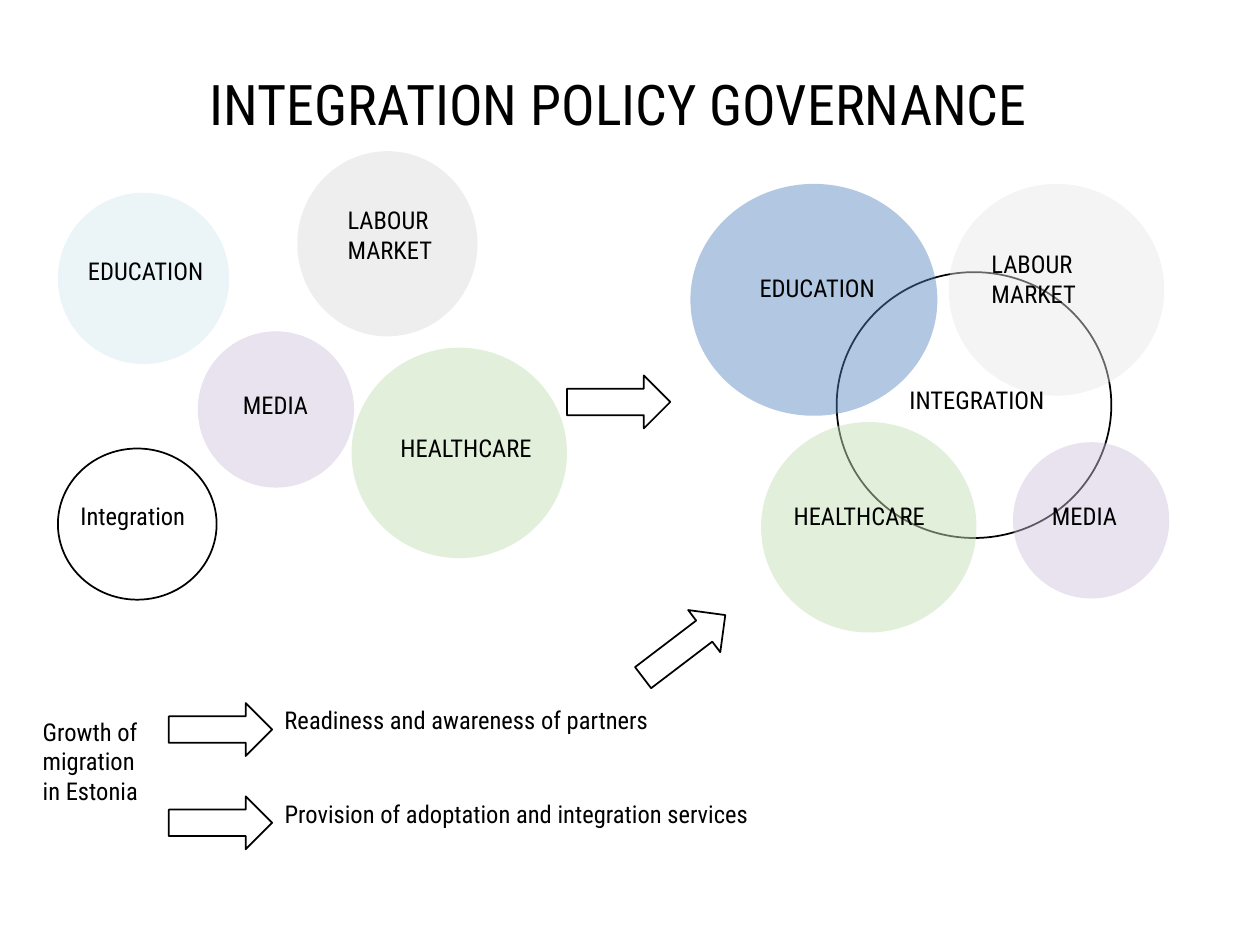
from lxml import etree
from pptx import Presentation
from pptx.dml.color import RGBColor
from pptx.enum.shapes import MSO_SHAPE
from pptx.enum.text import MSO_ANCHOR, MSO_AUTO_SIZE, PP_ALIGN
from pptx.oxml.ns import qn
from pptx.util import Inches, Pt

OVAL = MSO_SHAPE.OVAL
RIGHT_ARROW = MSO_SHAPE.RIGHT_ARROW
MIDDLE = MSO_ANCHOR.MIDDLE
CENTER = PP_ALIGN.CENTER
NO_AUTOFIT = MSO_AUTO_SIZE.NONE
FIT_SHAPE = MSO_AUTO_SIZE.SHAPE_TO_FIT_TEXT

FONT = "Roboto Condensed"
BLACK, WHITE = "000000", "FFFFFF"
PALE_BLUE, BLUE = "DBEEF4", "4F81BD"
GREY, PALE_GREY = "D9D9D9", "E7E6E6"
GREEN, PURPLE = "C5E0B4", "CCC1DA"
ARROW_SIZE = (0.82, 0.42)
LINE_HEIGHT, TWO_LINES, THREE_LINES = 0.34, 0.57, 0.81


def set_color(color_format, hex_color):
    color_format.rgb = RGBColor.from_string(hex_color)


def format_text(text_frame, size):
    for paragraph in text_frame.paragraphs:
        for run in paragraph.runs:
            run.font.name = FONT
            run.font.size = Pt(size)
            set_color(run.font.color, BLACK)


def add_filled(slide, kind, origin, box, fill, opacity=None):
    """Add a shape at an offset from origin: outlined if opaque, else without line."""
    left, top, width, height = box
    shape = slide.shapes.add_shape(
        kind, Inches(origin[0] + left), Inches(origin[1] + top),
        Inches(width), Inches(height))
    shape.shadow.inherit = False
    shape.fill.solid()
    set_color(shape.fill.fore_color, fill)
    if opacity is None:
        set_color(shape.line.color, BLACK)
        shape.line.width = Pt(1)
    else:
        shape.line.fill.background()
        color = shape.fill._xPr.find(f"{qn('a:solidFill')}/{qn('a:srgbClr')}")
        etree.SubElement(color, qn("a:alpha"), val=str(opacity * 1000))
    return shape


def add_arrow(slide, origin, left, top, rotation=0):
    arrow = add_filled(slide, RIGHT_ARROW, origin, (left, top, *ARROW_SIZE), WHITE)
    arrow.rotation = rotation


def add_label(slide, origin, text, left, top, width, height=LINE_HEIGHT):
    label = slide.shapes.add_textbox(
        Inches(origin[0] + left), Inches(origin[1] + top),
        Inches(width), Inches(height))
    text_frame = label.text_frame
    text_frame.word_wrap = True
    text_frame.auto_size = FIT_SHAPE
    text_frame.text = text
    format_text(text_frame, 14)


def add_title(slide, left, top, width, height):
    title = slide.shapes.title
    title.left, title.top = Inches(left), Inches(top)
    title.width, title.height = Inches(width), Inches(height)
    text_frame = title.text_frame
    text_frame.auto_size = NO_AUTOFIT
    text_frame.vertical_anchor = MIDDLE
    text_frame.text = "INTEGRATION POLICY GOVERNANCE"
    text_frame.paragraphs[0].alignment = CENTER
    text_frame.paragraphs[0].line_spacing = 0.9
    format_text(text_frame, 32)


def add_policy_fields(slide, origin, circles, labels):
    """Draw the circles back to front, then their labels on top."""
    for box, fill, opacity in circles:
        add_filled(slide, OVAL, origin, box, fill, opacity)
    for label in labels:
        add_label(slide, origin, *label)


def add_separate_fields(slide, left, top):
    circles = [
        ((0, 0.33, 1.36, 1.36), PALE_BLUE, 55),
        ((1.11, 1.43, 1.24, 1.24), PURPLE, 45),
        ((0, 2.36, 1.26, 1.2), WHITE, None),
        ((1.9, 0, 1.43, 1.47), GREY, 44),
        ((2.33, 1.56, 1.71, 1.67), GREEN, 49),
    ]
    labels = [
        ("EDUCATION", 0.14, 0.78, 1.34),
        ("MEDIA", 1.37, 1.85, 1.4),
        ("Integration", 0.08, 2.73, 1.33),
        ("LABOUR MARKET", 2.2, 0.38, 0.99, TWO_LINES),
        ("HEALTHCARE", 2.62, 2.19, 1.4),
    ]
    add_policy_fields(slide, (left, top), circles, labels)


def add_integrated_fields(slide, left, top):
    circles = [
        ((1.16, 0.7, 2.18, 2.11), WHITE, None),
        ((0, 0, 1.96, 1.84), BLUE, 44),
        ((2.05, 0, 1.71, 1.68), PALE_GREY, 44),
        ((0.56, 1.89, 1.71, 1.67), GREEN, 49),
        ((2.56, 2.05, 1.24, 1.24), PURPLE, 45),
    ]
    labels = [
        ("INTEGRATION", 1.64, 1.55, 1.4),
        ("EDUCATION", 0.45, 0.66, 1.4),
        ("LABOUR MARKET", 2.29, 0.47, 1.4, TWO_LINES),
        ("HEALTHCARE", 0.72, 2.47, 1.4),
        ("MEDIA", 2.77, 2.47, 1.4),
    ]
    add_policy_fields(slide, (left, top), circles, labels)


def add_migration_effects(slide, left, top):
    origin = (left, top)
    add_label(slide, origin, "Growth of migration\nin Estonia",
              0, 0.09, 1.11, THREE_LINES)
    effects = [("Readiness and awareness of partners", 3.34),
               ("Provision of adoptation and integration services", 5.88)]
    for row, (text, width) in enumerate(effects):
        row_top = row * 0.74
        add_label(slide, origin, text, 1.92, row_top, width)
        add_arrow(slide, origin, 1.1, row_top + 0.03)


def main():
    presentation = Presentation()
    presentation.slide_width = Inches(10)
    presentation.slide_height = Inches(7.5)
    title_only = presentation.slide_layouts[5]
    slide = presentation.slides.add_slide(title_only)

    add_title(slide, 0.57, 0.26, 8.68, 1.18)
    add_separate_fields(slide, 0.46, 1.2)
    add_integrated_fields(slide, 5.48, 1.46)
    add_migration_effects(slide, 0.24, 5.55)
    add_arrow(slide, (0, 0), 5.02, 4.92, rotation=322.7)
    add_arrow(slide, (0, 0), 4.5, 2.98)
    presentation.save("out.pptx")


if __name__ == "__main__":
    main()
